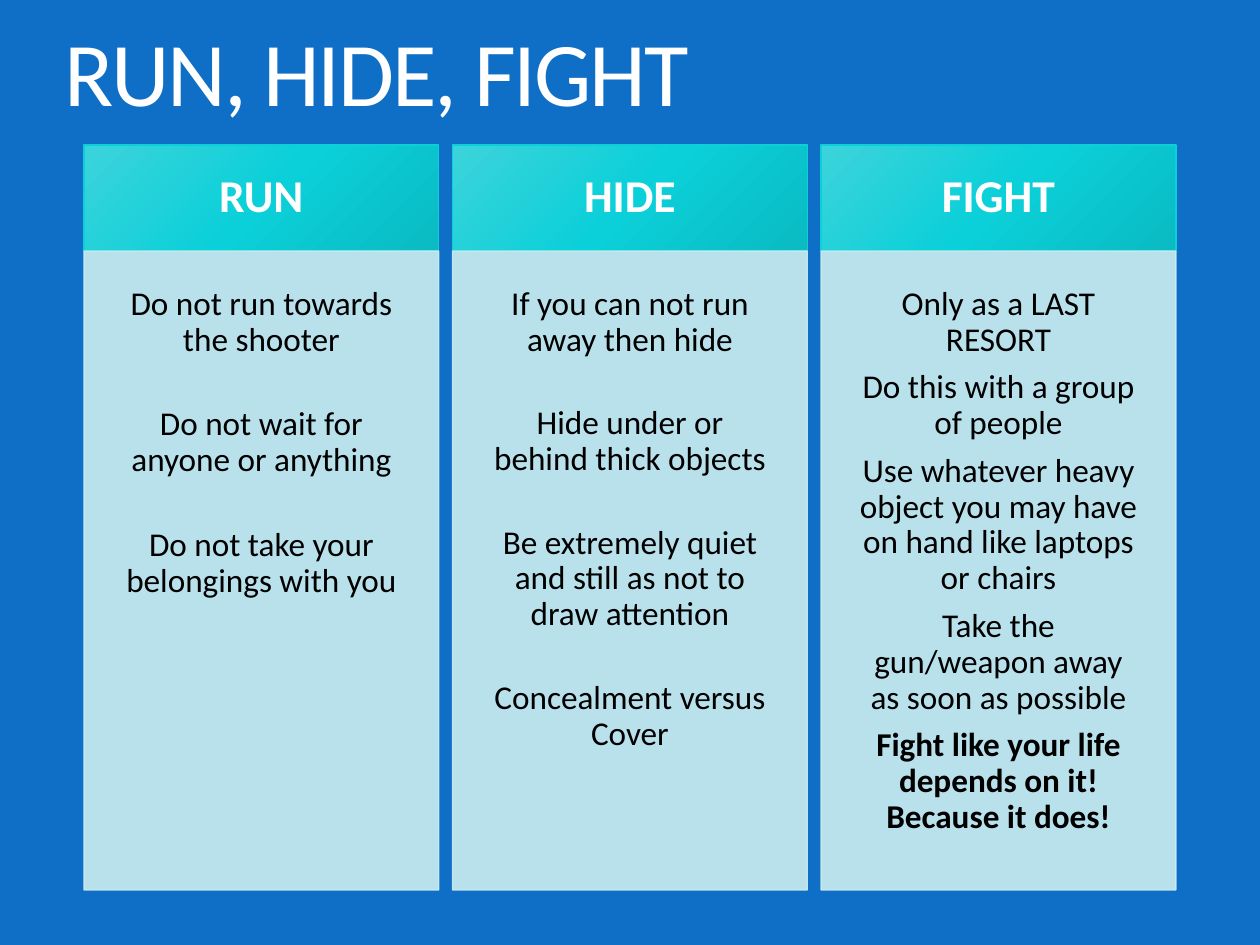
"""Build the "Run, Hide, Fight" slide with three advice columns."""
import copy
from dataclasses import dataclass

import lxml.etree
import pptx
import pptx.dml.color
import pptx.enum.shapes
import pptx.enum.text
import pptx.oxml.ns
import pptx.util

Pt = pptx.util.Pt
FONT = "Calibri"
COLORS = {
    "background": "0F6FC6",
    "white": "FFFFFF",
    "black": "000000",
    "header_line": "0BD0D9",
    "panel": "CCEEF1",
}
HEADER_GRADIENT = [(0, "3DD3DB"), (0.5, "0BD0D9"), (1, "0ABBC3")]
LEFT, WIDTH, PITCH = 48, 202.8, 210.6
HEADER_TOP, HEADER_HEIGHT, PANEL_HEIGHT = 82.9, 60.6, 365.1


@dataclass
class Column:
    """One advice column: heading, paragraphs and the gap after each."""

    heading: str
    advice: list[str]
    gap: float
    bold_last: bool = False


COLUMNS = [
    Column("RUN", [
        "Do not run towards the shooter",
        "Do not wait for anyone or anything",
        "Do not take your belongings with you",
    ], 28),
    Column("HIDE", [
        "If you can not run away then hide",
        "Hide under or behind thick objects",
        "Be extremely quiet and still as not to draw attention",
        "Concealment versus Cover",
    ], 27.2),
    Column("FIGHT", [
        "Only as a LAST RESORT",
        "Do this with a group of people",
        "Use whatever heavy object you may have on hand like laptops or chairs",
        "Take the gun/weapon away as soon as possible",
        "Fight like your life depends on it! Because it does!",
    ], 6.65, bold_last=True),
]


def rgb(value: str) -> pptx.dml.color.RGBColor:
    """Turn a hex string into a colour."""
    return pptx.dml.color.RGBColor.from_string(value)


def format_paragraph(para, size: float, color: str, bold: bool = False) -> None:
    """Set line spacing and the font of every run."""
    para.line_spacing = 0.9
    for run in para.runs:
        run.font.name = FONT
        run.font.size = Pt(size)
        run.font.bold = bold
        run.font.color.rgb = rgb(color)


def add_box(slide, left: float, top: float, height: float, line: str, inset: float):
    """Add an outlined rectangle with equal text insets."""
    box = slide.shapes.add_shape(
        pptx.enum.shapes.MSO_SHAPE.RECTANGLE, Pt(left), Pt(top), Pt(WIDTH), Pt(height))
    box.shadow.inherit = False
    box.line.color.rgb = rgb(line)
    box.line.width = Pt(0.75)
    frame = box.text_frame
    frame.word_wrap = True
    frame.margin_left = frame.margin_right = Pt(inset)
    frame.margin_top = frame.margin_bottom = Pt(inset)
    return box


def fill_gradient(box) -> None:
    """Give the box the three-stop diagonal header gradient."""
    box.fill.gradient()
    box.fill.gradient_angle = 315
    stop_list = box._element.spPr.find(".//" + pptx.oxml.ns.qn("a:gsLst"))
    stop_list.append(copy.deepcopy(stop_list[0]))
    for stop, (position, color) in zip(box.fill.gradient_stops, HEADER_GRADIENT):
        stop.position = position
        stop.color.rgb = rgb(color)


def make_translucent(box, percent: int) -> None:
    """Set the opacity of the fill and the line."""
    for color in box._element.spPr.iter(pptx.oxml.ns.qn("a:srgbClr")):
        alpha = lxml.etree.SubElement(color, pptx.oxml.ns.qn("a:alpha"))
        alpha.set("val", str(percent * 1000))


def add_header(slide, column: Column, left: float) -> None:
    """Draw the heading of a column."""
    box = add_box(slide, left, HEADER_TOP, HEADER_HEIGHT, COLORS["header_line"], 15.8)
    fill_gradient(box)
    box.text_frame.vertical_anchor = pptx.enum.text.MSO_ANCHOR.MIDDLE
    box.text_frame.text = column.heading
    para = box.text_frame.paragraphs[0]
    para.alignment = pptx.enum.text.PP_ALIGN.CENTER
    format_paragraph(para, 26, COLORS["white"], bold=True)


def add_panel(slide, column: Column, left: float) -> None:
    """Draw the advice panel of a column."""
    box = add_box(slide, left, HEADER_TOP + HEADER_HEIGHT, PANEL_HEIGHT, COLORS["panel"], 20.2)
    box.fill.solid()
    box.fill.fore_color.rgb = rgb(COLORS["panel"])
    make_translucent(box, 90)
    frame = box.text_frame
    frame.vertical_anchor = pptx.enum.text.MSO_ANCHOR.TOP
    frame.text = "\n".join(column.advice)
    for para in frame.paragraphs:
        para.alignment = pptx.enum.text.PP_ALIGN.CENTER
        para.space_after = Pt(column.gap)
        format_paragraph(para, 19, COLORS["black"])
    frame.paragraphs[-1].runs[0].font.bold = column.bold_last


def set_title(slide, text: str) -> None:
    """Place and format the slide title."""
    title = slide.shapes.title
    title.left, title.top, title.width, title.height = Pt(29.5), Pt(12.2), Pt(600.5), Pt(63.4)
    frame = title.text_frame
    frame.text = text
    frame.word_wrap = True
    frame.auto_size = pptx.enum.text.MSO_AUTO_SIZE.NONE
    frame.vertical_anchor = pptx.enum.text.MSO_ANCHOR.MIDDLE
    para = frame.paragraphs[0]
    para.alignment = pptx.enum.text.PP_ALIGN.LEFT
    format_paragraph(para, 52, COLORS["white"])
    para.runs[0]._r.get_or_add_rPr().set("spc", "-120")


def main() -> None:
    """Build and save the deck."""
    deck = pptx.Presentation()
    deck.slide_width, deck.slide_height = Pt(720), Pt(540)
    slide = deck.slides.add_slide(deck.slide_layouts.get_by_name("Title Only"))
    slide.background.fill.solid()
    slide.background.fill.fore_color.rgb = rgb(COLORS["background"])
    set_title(slide, "RUN, HIDE, FIGHT")
    for index, column in enumerate(COLUMNS):
        left = LEFT + index * PITCH
        add_header(slide, column, left)
        add_panel(slide, column, left)
    deck.save("out.pptx")


if __name__ == "__main__":
    main()
